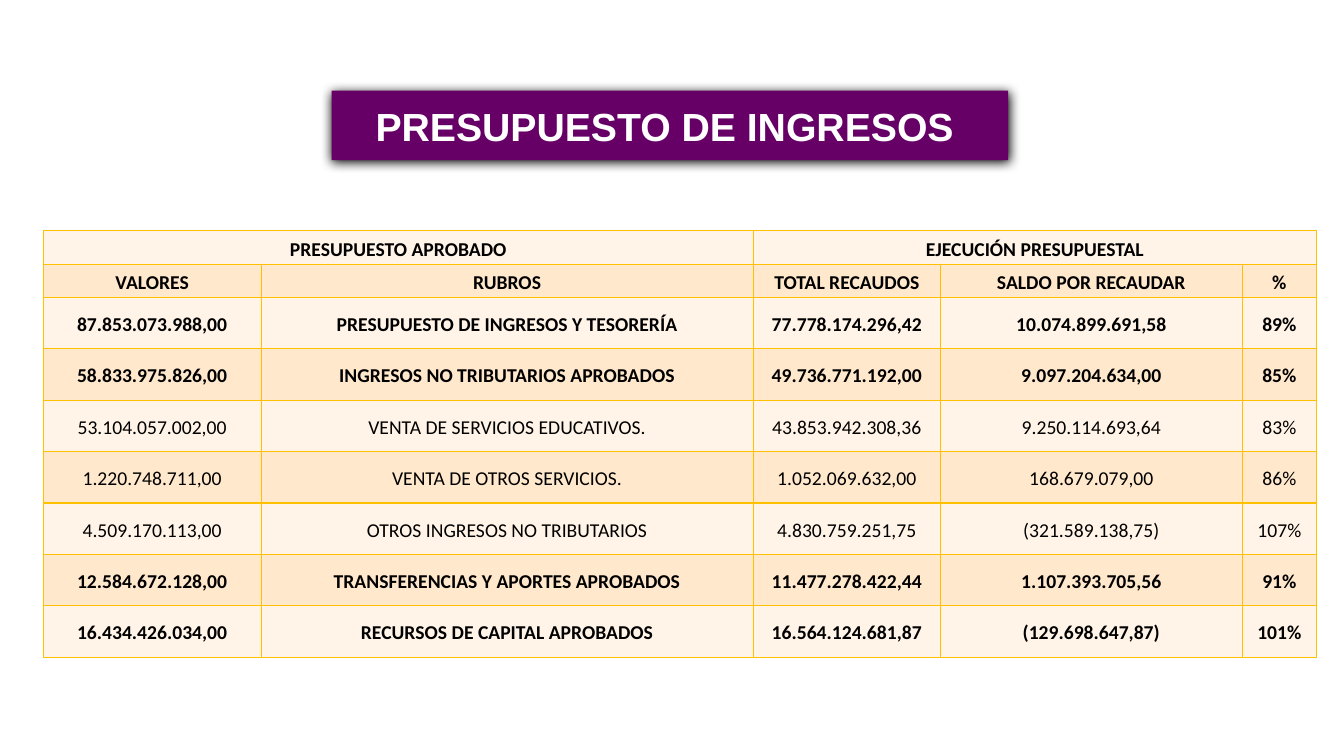
from lxml import etree
from pptx import Presentation
from pptx.dml.color import RGBColor
from pptx.enum.shapes import MSO_SHAPE
from pptx.enum.text import MSO_ANCHOR, PP_ALIGN
from pptx.oxml.ns import qn
from pptx.util import Inches, Pt

RECTANGLE = MSO_SHAPE.RECTANGLE
MIDDLE = MSO_ANCHOR.MIDDLE
CENTER = PP_ALIGN.CENTER

PURPLE, GOLD, BLACK, WHITE = "660066", "FFC000", "000000", "FFFFFF"
BANDS = ["FFF4E7", "FFE8CC"]
COLUMN_WIDTHS = [2.16, 4.88, 1.86, 2.99, 0.74]
HEADER_ROWS = 2
HEADER_HEIGHT, BODY_HEIGHT = 0.33, 0.51
PLAIN_ROWS = range(4, 7)
ROWS = [
    ["PRESUPUESTO APROBADO", "", "EJECUCIÓN PRESUPUESTAL", "", ""],
    ["VALORES", "RUBROS", "TOTAL RECAUDOS", "SALDO POR RECAUDAR", "%"],
    ["87.853.073.988,00", "PRESUPUESTO DE INGRESOS Y TESORERÍA", "77.778.174.296,42", "10.074.899.691,58", "89%"],
    ["58.833.975.826,00", "INGRESOS NO TRIBUTARIOS APROBADOS", "49.736.771.192,00", "9.097.204.634,00", "85%"],
    ["53.104.057.002,00", "VENTA DE SERVICIOS EDUCATIVOS.", "43.853.942.308,36", "9.250.114.693,64", "83%"],
    ["1.220.748.711,00", "VENTA DE OTROS SERVICIOS.", "1.052.069.632,00", "168.679.079,00", "86%"],
    ["4.509.170.113,00", "OTROS INGRESOS NO TRIBUTARIOS", "4.830.759.251,75", "(321.589.138,75)", "107%"],
    ["12.584.672.128,00", "TRANSFERENCIAS Y APORTES APROBADOS", "11.477.278.422,44", "1.107.393.705,56", "91%"],
    ["16.434.426.034,00", "RECURSOS DE CAPITAL APROBADOS", "16.564.124.681,87", "(129.698.647,87)", "101%"],
]


def paint(color_format, color):
    color_format.rgb = RGBColor.from_string(color)


def write(frame, text, font, size, color, bold):
    frame.text = text
    para = frame.paragraphs[0]
    para.alignment = CENTER
    for span in para.runs:
        span.font.name = font
        span.font.size = Pt(size)
        span.font.bold = bold
        paint(span.font.color, color)
    return para


deck = Presentation()
deck.slide_width = Inches(13.33)
deck.slide_height = Inches(7.5)
page = deck.slides.add_slide(deck.slide_layouts[6])

title = page.shapes.add_shape(RECTANGLE, Inches(3.29), Inches(0.9), Inches(6.71), Inches(0.69))
title.fill.solid()
paint(title.fill.fore_color, PURPLE)
title.line.fill.background()
title.shadow.inherit = False
effects = title.element.spPr.find(qn("a:effectLst"))
shadow = etree.SubElement(effects, qn("a:outerShdw"), blurRad=str(Pt(8.5)), dist=str(Pt(1)),
                          dir="5400000", algn="ctr", rotWithShape="0")
etree.SubElement(shadow, qn("a:srgbClr"), val=BLACK)
title.text_frame.vertical_anchor = MIDDLE
title.text_frame.word_wrap = True
write(title.text_frame, "PRESUPUESTO DE INGRESOS ", "Arial", 28, WHITE, True)

body_rows = len(ROWS) - HEADER_ROWS
table_height = HEADER_ROWS * HEADER_HEIGHT + body_rows * BODY_HEIGHT
table = page.shapes.add_table(len(ROWS), len(COLUMN_WIDTHS), Inches(0.43), Inches(2.29),
                              Inches(sum(COLUMN_WIDTHS)), Inches(table_height)).table
for column, width in zip(table.columns, COLUMN_WIDTHS):
    column.width = Inches(width)

for row_index, texts in enumerate(ROWS):
    table.rows[row_index].height = Inches(HEADER_HEIGHT if row_index < HEADER_ROWS else BODY_HEIGHT)
    for column_index, text in enumerate(texts):
        cell = table.cell(row_index, column_index)
        cell.margin_left = cell.margin_right = Inches(0.05)
        cell.margin_top = cell.margin_bottom = 0
        cell.vertical_anchor = MIDDLE
        para = write(cell.text_frame, text, "Calibri", 14, BLACK, row_index not in PLAIN_ROWS)
        para.line_spacing = 1.15
        properties = cell._tc.get_or_add_tcPr()
        for side in ("a:lnL", "a:lnR", "a:lnT", "a:lnB"):
            border = etree.SubElement(properties, qn(side), w=str(Pt(1)))
            border_fill = etree.SubElement(border, qn("a:solidFill"))
            etree.SubElement(border_fill, qn("a:srgbClr"), val=GOLD)
        cell.fill.solid()
        paint(cell.fill.fore_color, BANDS[row_index % 2])

table.cell(0, 0).merge(table.cell(0, 1))
table.cell(0, 2).merge(table.cell(0, 4))

deck.save("out.pptx")
